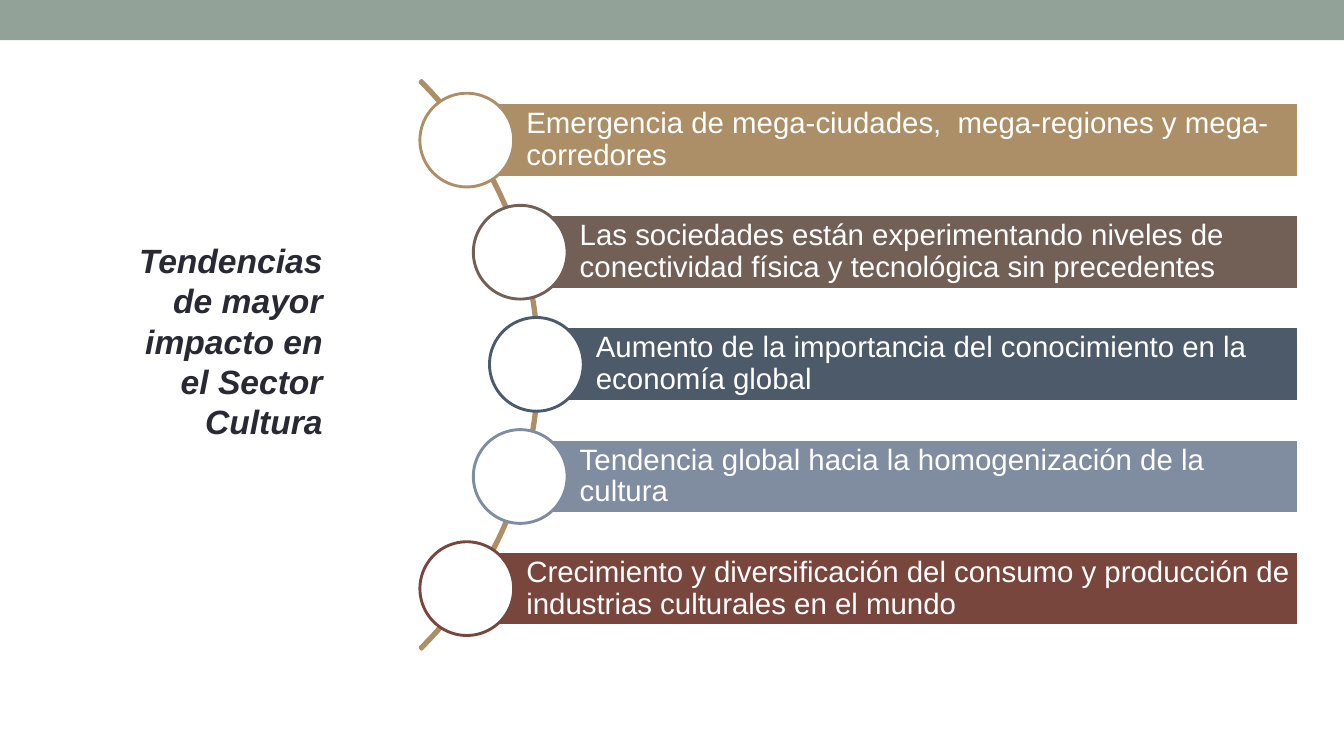
from pptx import Presentation
from pptx.dml.color import RGBColor
from pptx.enum.shapes import MSO_SHAPE
from pptx.enum.text import MSO_ANCHOR, MSO_AUTO_SIZE, PP_ALIGN
from pptx.util import Inches, Pt

RECT, OVAL, ARC = MSO_SHAPE.RECTANGLE, MSO_SHAPE.OVAL, MSO_SHAPE.BLOCK_ARC
LEFT, RIGHT = PP_ALIGN.LEFT, PP_ALIGN.RIGHT
TOP, MIDDLE = MSO_ANCHOR.TOP, MSO_ANCHOR.MIDDLE

COLORS = {
    "white": "FFFFFF", "ink": "292934", "band": "93A299", "tan": "AD8F67",
    "brown": "726056", "slate": "4C5A6A", "blue": "808DA0", "red": "79463D",
}

# Each trend: bar left edge, colour, text
TRENDS = [
    (4.63, "tan", "Emergencia de mega-ciudades,  mega-regiones y mega-corredores"),
    (5.16, "brown", "Las sociedades están experimentando niveles de conectividad "
                    "física y tecnológica sin precedentes"),
    (5.32, "slate", "Aumento de la importancia del conocimiento en la economía global"),
    (5.16, "blue", "Tendencia global hacia la homogenización de la cultura"),
    (4.63, "red", "Crecimiento y diversificación del consumo y producción de "
                  "industrias culturales en el mundo"),
]
BAR_RIGHT, BAR_HEIGHT = 12.88, 0.74
FIRST_TOP, LAST_TOP = 1.02, 5.47
STEP = (LAST_TOP - FIRST_TOP) / (len(TRENDS) - 1)
CIRCLE = 0.93


def rgb(name):
    return RGBColor.from_string(COLORS[name])


def add_figure(slide, kind, left, top, width, height, fill=None, line=None):
    sp = slide.shapes.add_shape(kind, Inches(left), Inches(top),
                                Inches(width), Inches(height))
    sp.shadow.inherit = False
    if fill:
        sp.fill.solid()
        sp.fill.fore_color.rgb = rgb(fill)
    else:
        sp.fill.background()
    if line:
        sp.line.color.rgb = rgb(line)
        sp.line.width = Pt(2.08)
    else:
        sp.line.fill.background()
    return sp


def write(sp, text, size, color, align=LEFT, anchor=MIDDLE, bold=False,
          italic=False, spacing=1.0, insets=(0.1, 0.05, 0.1, 0.05)):
    tf = sp.text_frame
    tf.word_wrap = True
    tf.auto_size = MSO_AUTO_SIZE.NONE
    tf.vertical_anchor = anchor
    tf.margin_left, tf.margin_top, tf.margin_right, tf.margin_bottom = map(Inches, insets)
    p = tf.paragraphs[0]
    p.alignment = align
    p.line_spacing = spacing
    r = p.add_run()
    r.text = text
    r.font.name = "Arial"
    r.font.size = Pt(size)
    r.font.bold = bold
    r.font.italic = italic
    r.font.color.rgb = rgb(color)


def add_title(slide, text):
    sp = slide.shapes.title
    sp.left, sp.top, sp.width, sp.height = map(Inches, (1.15, 2.33, 2.15, 2.12))
    write(sp, text, 24, "ink", align=RIGHT, anchor=TOP, bold=True, italic=True)


def add_trend(slide, left, top, color, text):
    bar = add_figure(slide, RECT, left, top, BAR_RIGHT - left, BAR_HEIGHT,
                     fill=color, line="white")
    write(bar, text, 21, "white", spacing=0.9, insets=(0.59, 0.06, 0.06, 0.06))
    # Circle centred on the left edge of the bar
    add_figure(slide, OVAL, left - CIRCLE / 2, top + (BAR_HEIGHT - CIRCLE) / 2,
               CIRCLE, CIRCLE, fill="white", line=color)


def main():
    prs = Presentation()
    prs.slide_width, prs.slide_height = Inches(13.33), Inches(7.5)
    slide = prs.slides.add_slide(prs.slide_layouts[5])

    # Top band and title
    add_figure(slide, RECT, 0, 0, 13.33, 0.4, fill="band")
    add_title(slide, "Tendencias de mayor impacto en el Sector Cultura")

    # Arc that links the trends
    arc = add_figure(slide, ARC, -2.63, -0.37, 7.98, 7.98, line="tan")
    for i, value in enumerate((189, 27, 0.003)):
        arc.adjustments[i] = value

    # Trends
    for i, (left, color, text) in enumerate(TRENDS):
        add_trend(slide, left, FIRST_TOP + i * STEP, color, text)

    prs.save("out.pptx")


if __name__ == "__main__":
    main()
